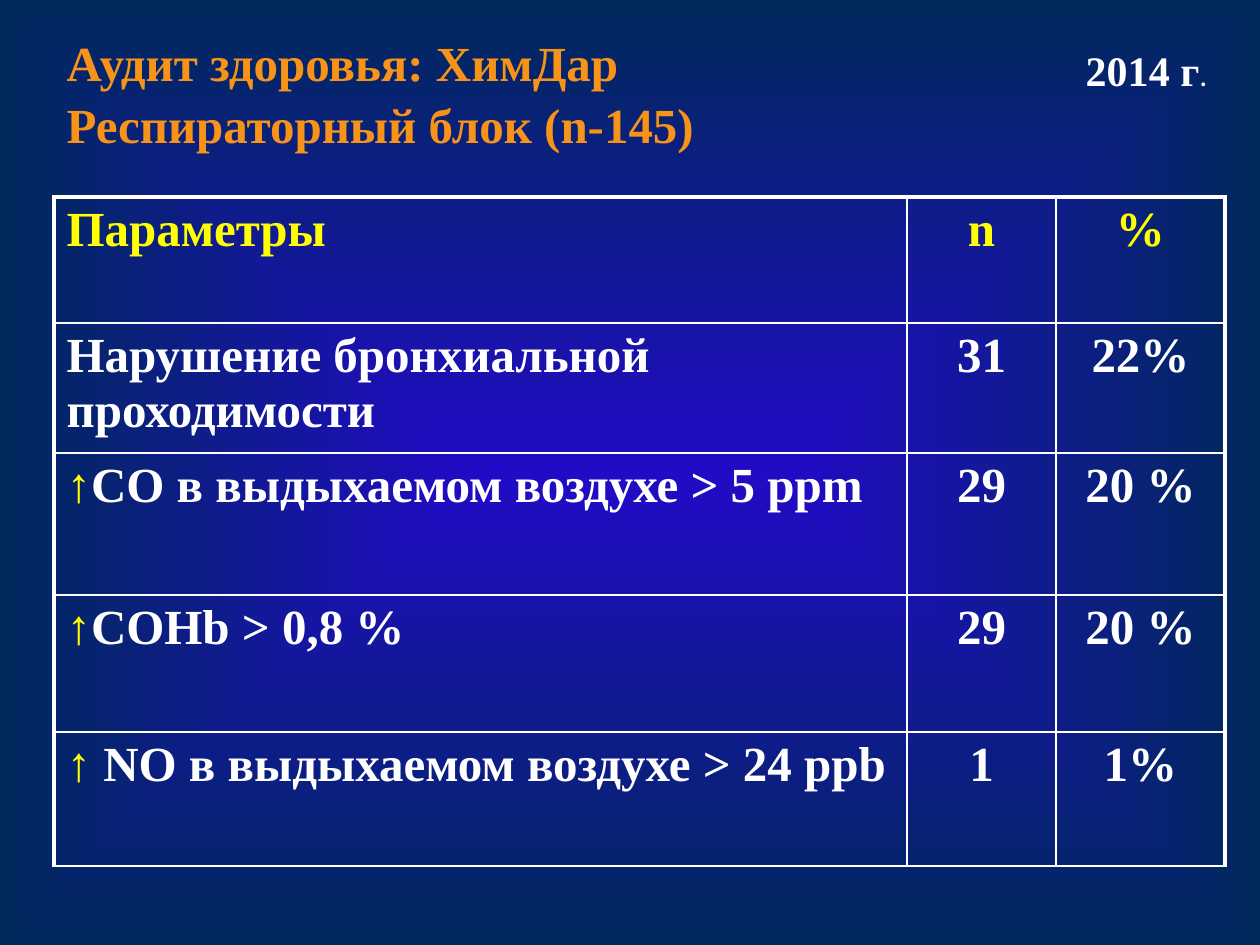
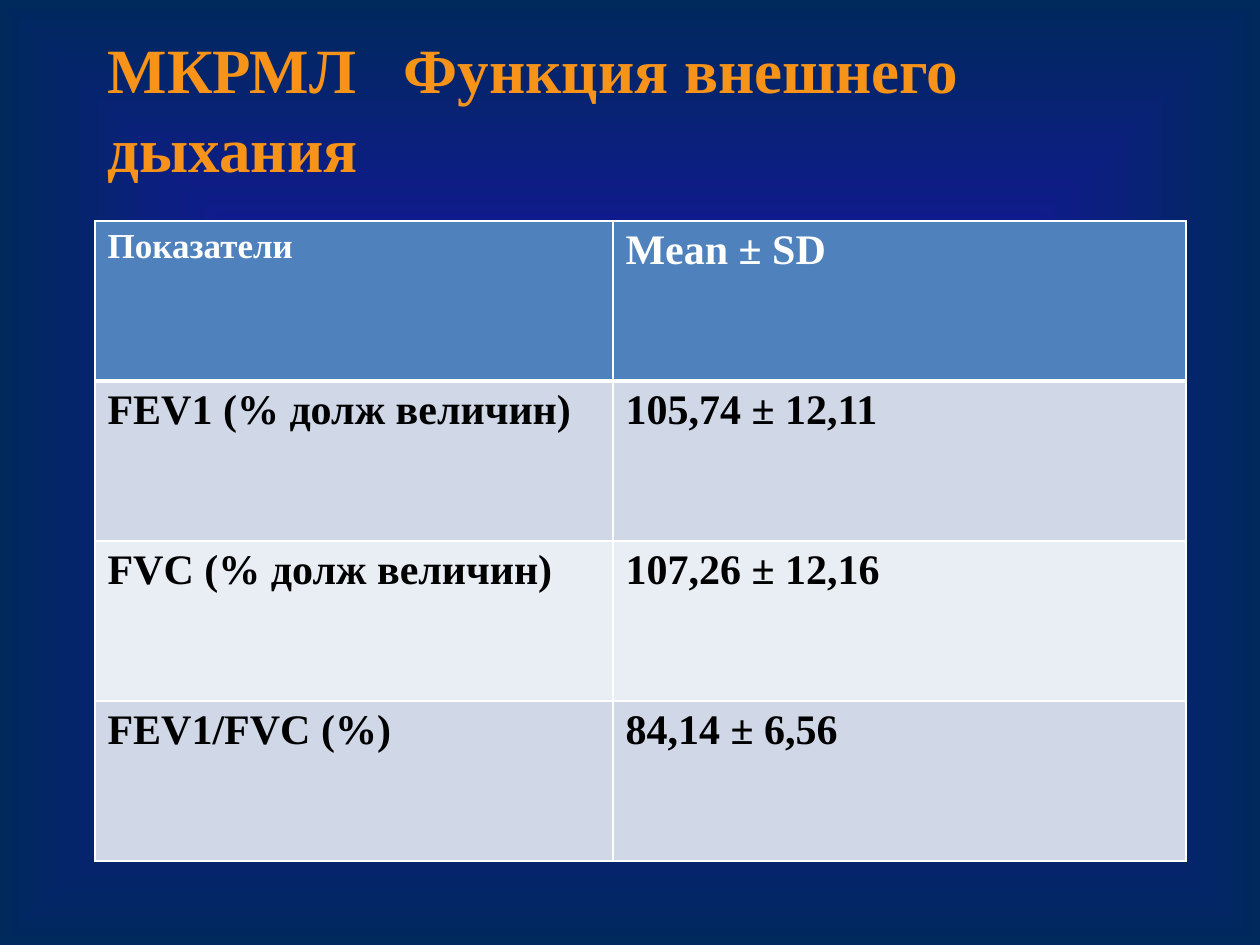
from lxml import etree
from pptx import Presentation
from pptx.dml.color import RGBColor
from pptx.enum.text import MSO_ANCHOR, MSO_AUTO_SIZE, PP_ALIGN
from pptx.oxml.ns import qn
from pptx.util import Emu, Pt

LEFT, CENTER = PP_ALIGN.LEFT, PP_ALIGN.CENTER
MIDDLE, NO_FIT = MSO_ANCHOR.MIDDLE, MSO_AUTO_SIZE.NONE

GLOW = RGBColor(0x21, 0x0B, 0xC5)
NAVY = RGBColor(0x00, 0x29, 0x5C)
ORANGE = RGBColor(0xF7, 0x93, 0x19)
YELLOW = RGBColor(0xFF, 0xFF, 0x00)
WHITE = RGBColor(0xFF, 0xFF, 0xFF)
BLACK = RGBColor(0x00, 0x00, 0x00)
HEADER_BLUE = RGBColor(0x4F, 0x81, 0xBD)
BAND_DARK = RGBColor(0xD0, 0xD8, 0xE8)
BAND_LIGHT = RGBColor(0xE9, 0xED, 0xF4)

SERIF, SANS = "Times New Roman", "Calibri"
PX = 914400 / 126
TITLE_ONLY = 5
THIN, FRAME, HEADER_RULE = 1, 2.25, 3

# Content; a tuple in a cell is an arrow mark followed by its text
AUDIT = {
    "title": ["Аудит здоровья: ХимДар", "Респираторный блок (n-145)"],
    "title_box": (54, 26, 1172, 131),
    "title_size": 28,
    "corner": (54, 197),
    "widths": [853, 149, 169],
    "heights": [126, 130, 142, 137, 134],
    "rows": [
        ["Параметры", "n", "%"],
        ["Нарушение бронхиальной проходимости", "31", "22%"],
        [("↑", "СО в выдыхаемом воздухе > 5 ppm"), "29", "20 %"],
        [("↑", "СОHb > 0,8 %"), "29", "20 %"],
        [("↑ ", "NO в выдыхаемом воздухе > 24 ppb"), "1", "1%"],
    ],
}
YEAR_BOX = (1057, 35, 179, 69)
YEAR = [
    ("2014 г", {"name": SERIF, "size": Pt(24), "bold": True}),
    (".", {"name": SANS, "size": Pt(18), "bold": False}),
]

LUNGS = {
    "title": ["МКРМЛ\tФункция внешнего дыхания"],
    "title_box": (95, 38, 1091, 136),
    "title_size": 36,
    "title_tab": 296,
    "corner": (95, 221),
    "widths": [518, 573],
    "heights": [160] * 4,
    "rows": [
        ["Показатели", "Mean ± SD"],
        ["FEV1 (% долж величин)", "105,74 ± 12,11"],
        ["FVC (% долж величин)", "107,26 ± 12,16"],
        ["FEV1/FVC (%)", "84,14 ± 6,56"],
    ],
}


def px(*lengths):
    return [Emu(round(length * PX)) for length in lengths]


def add_span(para, text, color, **formats):
    span = para.add_run()
    span.text = text
    span.font.color.rgb = color
    for name, value in formats.items():
        setattr(span.font, name, value)


def paint_background(master):
    """Give every page a rectangular glow from the centre."""
    fill = master.background.fill
    fill.gradient()
    for stop, color, position in zip(fill.gradient_stops, (GLOW, NAVY), (0, 1)):
        stop.color.rgb = color
        stop.position = position
    gradient = next(master.element.iter(qn("a:gradFill")))
    for line in gradient.findall(qn("a:lin")):
        gradient.remove(line)
    shade = etree.SubElement(gradient, qn("a:path"), {"path": "shape"})
    etree.SubElement(shade, qn("a:fillToRect"), dict.fromkeys("ltrb", "50000"))


def add_page(deck, content):
    """Add a page with its formatted title."""
    page = deck.slides.add_slide(deck.slide_layouts[TITLE_ONLY])
    title = page.shapes.title
    title.left, title.top, title.width, title.height = px(*content["title_box"])
    frame = title.text_frame
    for name, value in {"auto_size": NO_FIT, "vertical_anchor": MIDDLE, "word_wrap": True}.items():
        setattr(frame, name, value)
    para = frame.paragraphs[0]
    para.alignment = LEFT
    para.line_spacing = 1.05
    for number, line in enumerate(content["title"]):
        if number:
            para.add_line_break()
        add_span(para, line, ORANGE, name=SERIF, size=Pt(content["title_size"]), bold=True)
    if "title_tab" in content:
        stops = etree.SubElement(para._p.get_or_add_pPr(), qn("a:tabLst"))
        position = str(px(content["title_tab"])[0])
        etree.SubElement(stops, qn("a:tab"), {"pos": position, "algn": "l"})
    return page


def set_borders(cell, widths):
    """Draw white edges; widths are in points for L, R, T and B."""
    properties = cell._tc.get_or_add_tcPr()
    for index, (side, width) in enumerate(zip("LRTB", widths)):
        edge = etree.Element(qn(f"a:ln{side}"), {"w": str(int(Pt(width)))})
        solid = etree.SubElement(edge, qn("a:solidFill"))
        etree.SubElement(solid, qn("a:srgbClr"), {"val": str(WHITE)})
        properties.insert(index, edge)


def add_grid(page, content, style_cell):
    """Add a table and let style_cell(cell, row, column, text) finish each cell."""
    rows, widths, heights = (content[key] for key in ("rows", "widths", "heights"))
    place = px(*content["corner"], sum(widths), sum(heights))
    table = page.shapes.add_table(len(rows), len(widths), *place).table
    table.horz_banding = False
    for column, width in zip(table.columns, px(*widths)):
        column.width = width
    for row, height in zip(table.rows, px(*heights)):
        row.height = height
    for r, texts in enumerate(rows):
        for c, text in enumerate(texts):
            style_cell(table.cell(r, c), r, c, text)


def style_audit_cell(cell, row, column, text):
    cell.fill.background()
    para = cell.text_frame.paragraphs[0]
    para.alignment = CENTER if column else LEFT
    color = WHITE if row else YELLOW
    if isinstance(text, tuple):
        spans = zip(text, (YELLOW, WHITE))
    else:
        spans = [(text, color)]
    for words, ink in spans:
        add_span(para, words, ink, name=SERIF, size=Pt(28), bold=True)
    last = len(AUDIT["widths"]) - 1
    set_borders(cell, (
        THIN if column else FRAME,
        FRAME if column == last else THIN,
        THIN if row else FRAME,
        THIN,
    ))


def style_lungs_cell(cell, row, column, text):
    cell.fill.solid()
    if row == 0:
        cell.fill.fore_color.rgb = HEADER_BLUE
    else:
        cell.fill.fore_color.rgb = BAND_DARK if row % 2 else BAND_LIGHT
    size = 20 if row == column == 0 else 24
    add_span(cell.text_frame.paragraphs[0], text, BLACK if row else WHITE,
             name=SERIF, size=Pt(size), bold=True)
    set_borders(cell, (
        THIN,
        THIN,
        HEADER_RULE if row == 1 else THIN,
        THIN if row else HEADER_RULE,
    ))


def add_year(page):
    frame = page.shapes.add_textbox(*px(*YEAR_BOX)).text_frame
    for name, value in {"auto_size": NO_FIT, "vertical_anchor": MIDDLE, "word_wrap": True}.items():
        setattr(frame, name, value)
    para = frame.paragraphs[0]
    para.alignment = CENTER
    for text, formats in YEAR:
        add_span(para, text, WHITE, **formats)


def main():
    deck = Presentation()
    deck.slide_width, deck.slide_height = px(1260, 945)
    paint_background(deck.slide_master)

    # Respiratory audit
    page = add_page(deck, AUDIT)
    add_grid(page, AUDIT, style_audit_cell)
    add_year(page)

    # Lung function
    page = add_page(deck, LUNGS)
    add_grid(page, LUNGS, style_lungs_cell)

    deck.save("out.pptx")


if __name__ == "__main__":
    main()
